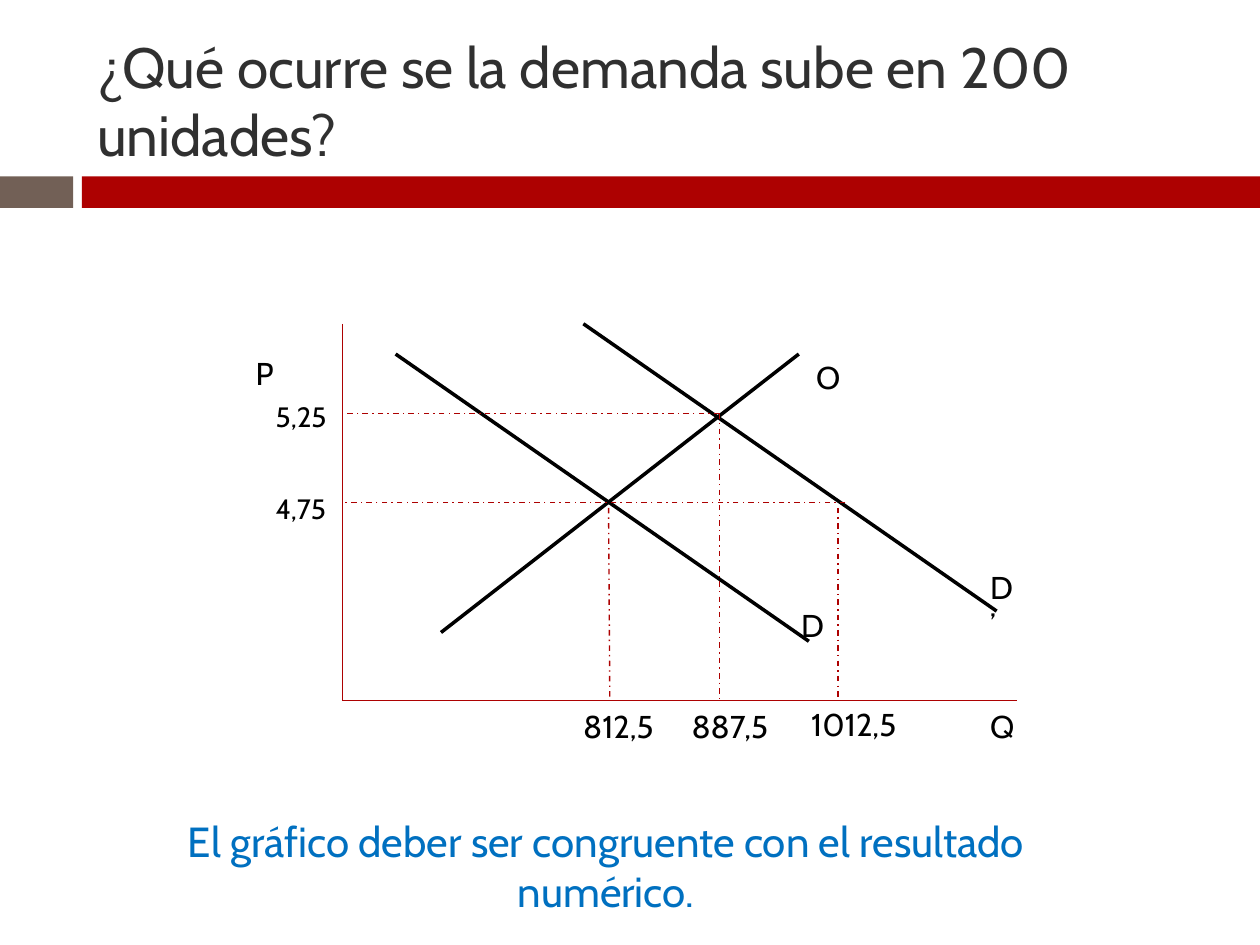
"""Build a slide showing how a rise in demand moves the market equilibrium."""
from dataclasses import dataclass
from typing import Optional

from lxml.etree import SubElement
from pptx import Presentation
from pptx.dml.color import RGBColor
from pptx.enum.dml import MSO_LINE
from pptx.enum.shapes import MSO_CONNECTOR, MSO_SHAPE
from pptx.enum.text import MSO_ANCHOR, MSO_AUTO_SIZE, PP_ALIGN
from pptx.oxml.ns import qn
from pptx.slide import Slide
from pptx.text.text import TextFrame
from pptx.util import Inches, Pt


@dataclass(frozen=True)
class Theme:
    """Hold the colours, font and type sizes."""
    font: str = "Cabin"
    red: str = "AD0101"
    brown: str = "726056"
    dark: str = "303030"
    black: str = "000000"
    blue: str = "0070C0"
    title: float = 32.4
    note: float = 24
    label: float = 18
    price: float = 16
    thin: float = 0.79
    thick: float = 2


THEME = Theme()


@dataclass(frozen=True)
class Bar:
    """Describe a filled band of the header."""
    left: float
    width: float
    color: str


@dataclass(frozen=True)
class Line:
    """Describe a straight line between two points."""
    x1: float
    y1: float
    x2: float
    y2: float
    color: str = THEME.red
    width: float = THEME.thin
    dash: Optional[MSO_LINE] = None


@dataclass(frozen=True)
class Label:
    """Describe a text box."""
    text: str
    left: float
    top: float
    width: float
    height: float = 0.4
    size: float = THEME.label
    color: str = THEME.black
    align: PP_ALIGN = PP_ALIGN.LEFT
    wrap: bool = True


def curve(x: float, y: float, dx: float, dy: float) -> Line:
    """Return a thick black line from a point and its run and rise."""
    return Line(x, y, x + dx, y + dy, THEME.black, THEME.thick)


def guide(x1: float, y1: float, x2: float, y2: float) -> Line:
    """Return a dashed guide line."""
    return Line(x1, y1, x2, y2, dash=MSO_LINE.DASH_DOT)


def write(frame: TextFrame, text: str, size: float, color: str, align: PP_ALIGN) -> None:
    """Fill a text frame with one formatted run."""
    para = frame.paragraphs[0]
    para.alignment = align
    run = para.add_run()
    run.text = text
    run.font.name = THEME.font
    run.font.size = Pt(size)
    run.font.color.rgb = RGBColor.from_string(color)


def draw_bar(slide: Slide, bar: Bar) -> None:
    """Draw one header band."""
    shape = slide.shapes.add_shape(
        MSO_SHAPE.RECTANGLE, Inches(bar.left), Inches(1.4), Inches(bar.width), Inches(0.25))
    shape.shadow.inherit = False
    shape.fill.solid()
    shape.fill.fore_color.rgb = RGBColor.from_string(bar.color)
    shape.line.fill.background()


def draw_title(slide: Slide, text: str) -> None:
    """Place and fill the title."""
    title = slide.shapes.title
    title.left, title.top = Inches(0.67), Inches(0.25)
    title.width, title.height = Inches(8.92), Inches(1.08)
    frame = title.text_frame
    frame.word_wrap = True
    frame.auto_size = MSO_AUTO_SIZE.NONE
    frame.vertical_anchor = MSO_ANCHOR.MIDDLE
    write(frame, text, THEME.title, THEME.dark, PP_ALIGN.LEFT)


def draw_line(slide: Slide, line: Line) -> None:
    """Draw one straight connector."""
    shape = slide.shapes.add_connector(
        MSO_CONNECTOR.STRAIGHT, Inches(line.x1), Inches(line.y1), Inches(line.x2), Inches(line.y2))
    shape.line.color.rgb = RGBColor.from_string(line.color)
    shape.line.width = Pt(line.width)
    if line.dash is not None:
        shape.line.dash_style = line.dash
    SubElement(shape._element.spPr, qn("a:effectLst"))


def draw_label(slide: Slide, label: Label) -> None:
    """Draw one text box."""
    box = slide.shapes.add_textbox(
        Inches(label.left), Inches(label.top), Inches(label.width), Inches(label.height))
    frame = box.text_frame
    frame.word_wrap = label.wrap
    frame.auto_size = MSO_AUTO_SIZE.SHAPE_TO_FIT_TEXT
    write(frame, label.text, label.size, label.color, label.align)


LEFT, BASE, TOP = 2.72, 5.56, 2.57
LOW, HIGH = 3.99, 3.28
RUN, DROP = 3.28, 2.28

BARS = [Bar(0, 0.58, THEME.brown), Bar(0.65, 9.35, THEME.red)]

LINES = [
    Line(LEFT, TOP, LEFT, BASE),
    Line(LEFT, BASE, 8.07, BASE),
    curve(3.14, 2.81, RUN, DROP),
    curve(4.63, TOP, RUN, DROP),
    curve(3.5, 5.02, 2.84, -2.21),
    guide(4.83, 4.03, 4.84, BASE),
    guide(6.71, LOW, LEFT, LOW),
    guide(6.65, 4.03, 6.65, BASE),
    guide(5.71, HIGH, 5.71, BASE),
    guide(5.71, HIGH, 2.74, HIGH),
]

LABELS = [
    Label("P", 1.93, 2.76, 0.79),
    Label("Q", 7.76, BASE, 1.1),
    Label("O", 6.38, 2.79, 0.4, wrap=False),
    Label("D", 6.26, 4.76, 0.35, wrap=False),
    Label("D’", 7.76, 4.46, 0.41),
    Label("5,25", 2.09, 3.12, 0.87, 0.37, THEME.price),
    Label("4,75", 2.09, 3.85, 0.87, 0.37, THEME.price),
    Label("812,5", 4.53, BASE, 0.94),
    Label("887,5", 5.39, BASE, 0.94),
    Label("1012,5", 6.34, 5.55, 0.94),
    Label("El gráfico deber ser congruente con el resultado numérico.",
          0.91, 6.42, 7.8, 0.91, THEME.note, THEME.blue, PP_ALIGN.CENTER),
]


def main() -> None:
    """Build and save the slide."""
    deck = Presentation()
    deck.slide_width, deck.slide_height = Inches(10), Inches(7.5)
    slide = deck.slides.add_slide(deck.slide_layouts[5])
    for bar in BARS:
        draw_bar(slide, bar)
    draw_title(slide, "¿Qué ocurre se la demanda sube en 200 unidades?")
    for line in LINES:
        draw_line(slide, line)
    for label in LABELS:
        draw_label(slide, label)
    deck.save("out.pptx")


if __name__ == "__main__":
    main()
